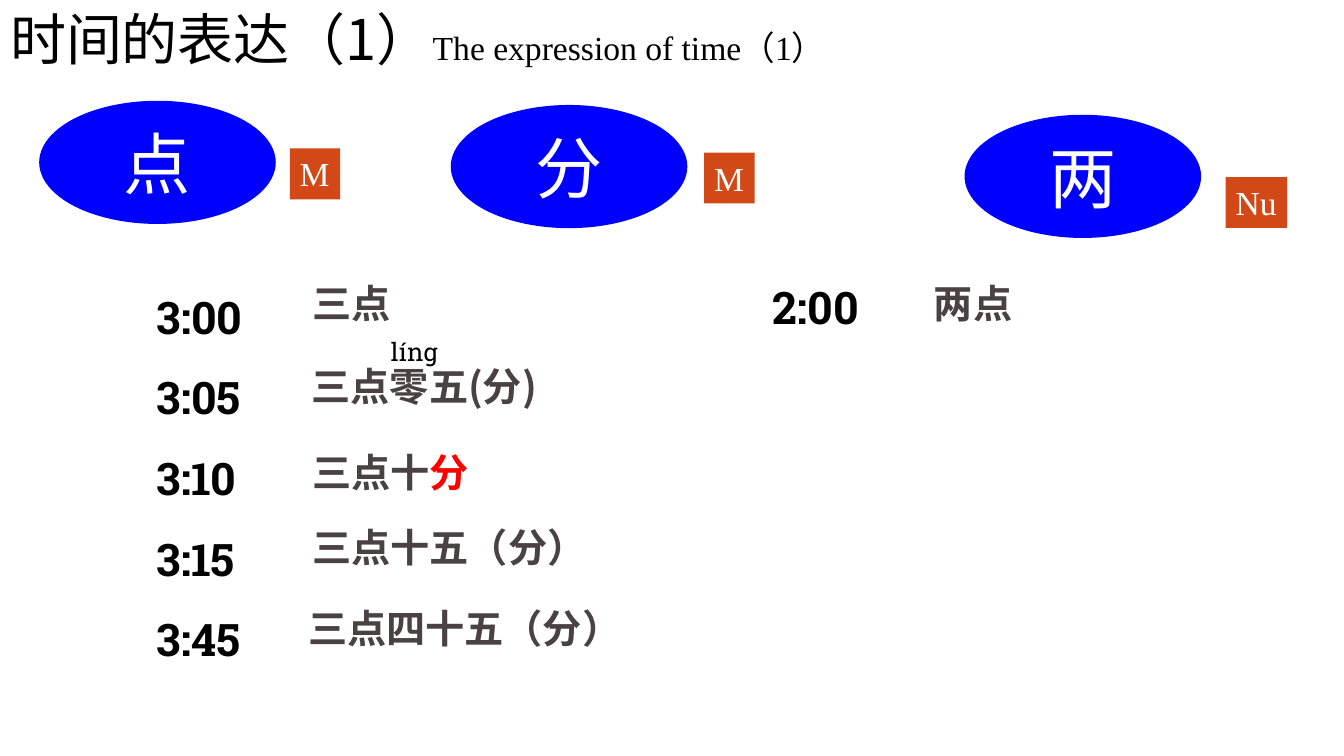
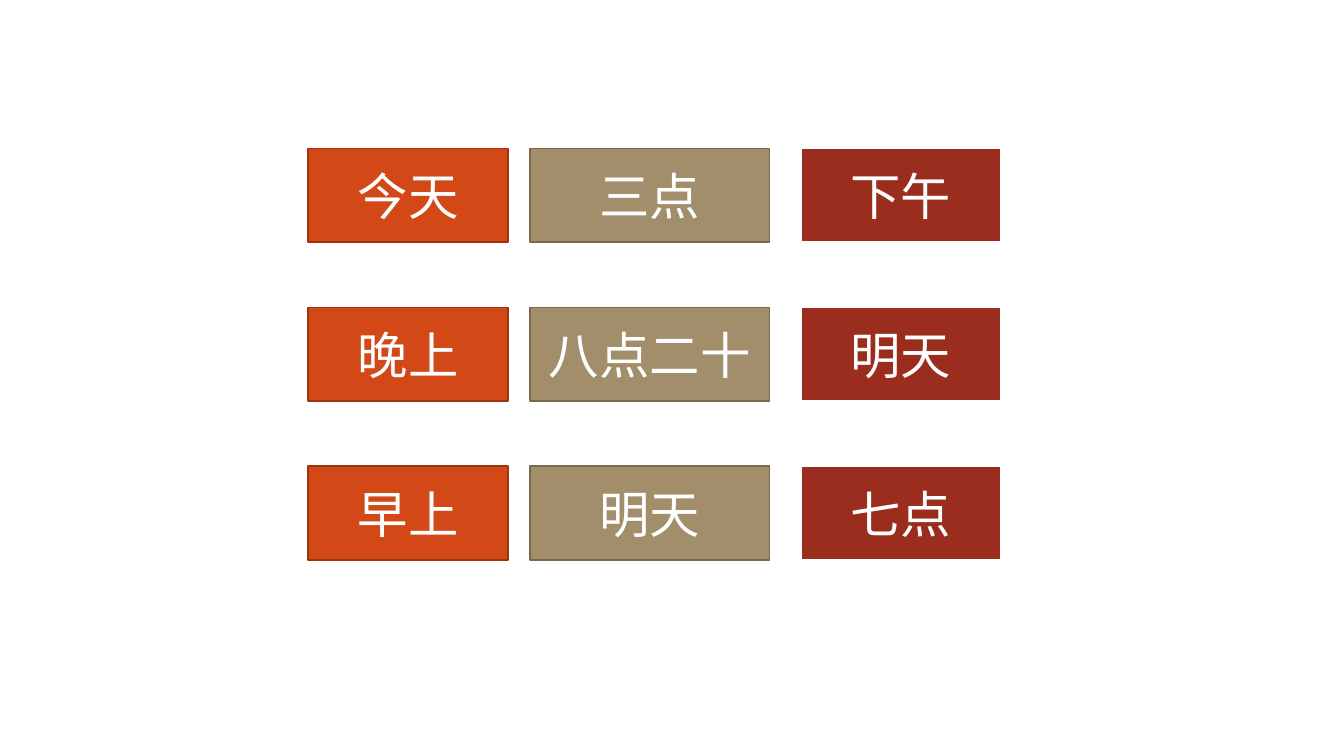
import pptx
import pptx.util
import pptx.dml.color
import pptx.enum.shapes
import pptx.enum.text
import pptx.oxml
import pptx.oxml.ns

Pt = pptx.util.Pt
RGB = pptx.dml.color.RGBColor
SHAPE = pptx.enum.shapes.MSO_SHAPE
ALIGN = pptx.enum.text.PP_ALIGN
ANCHOR = pptx.enum.text.MSO_ANCHOR

# Shared colours and fonts
BLACK = RGB(0x00, 0x00, 0x00)
WHITE = RGB(0xFF, 0xFF, 0xFF)
BLUE = RGB(0x00, 0x00, 0xFF)
RED = RGB(0xFF, 0x00, 0x00)
GREY = RGB(0x49, 0x41, 0x42)
ORANGE = RGB(0xD3, 0x48, 0x17)
DARK_ORANGE = RGB(0x9C, 0x35, 0x11)
TAN = RGB(0xA2, 0x8E, 0x6A)
DARK_TAN = RGB(0x78, 0x69, 0x4E)
BRICK = RGB(0x9B, 0x2D, 0x1F)
HAN = "Noto Sans CJK SC"
SLAB = "Roboto Slab"
SERIF = "Times New Roman"


def add_text(paragraph, text, size=28, font=HAN, color=BLACK, bold=False):
    """Add one run; Chinese characters always use the Han font."""
    run = paragraph.add_run()
    run.text = text
    run.font.size = Pt(size)
    run.font.name = font
    run.font.bold = bold
    run.font.color.rgb = color
    east_asian = pptx.oxml.parse_xml(
        f'<a:ea {pptx.oxml.ns.nsdecls("a")} typeface="{HAN}"/>')
    run.font._element.find(pptx.oxml.ns.qn("a:latin")).addnext(east_asian)


def add_box(slide, box):
    """Add a wrapping text box and return its first paragraph."""
    frame = slide.shapes.add_textbox(*map(Pt, box)).text_frame
    frame.word_wrap = True
    return frame.paragraphs[0]


def add_card(slide, kind, box, text, fill, line=None, line_width=1,
             align=ALIGN.CENTER, anchor=ANCHOR.MIDDLE, wrap=True, **style):
    card = slide.shapes.add_shape(kind, *map(Pt, box))
    card.shadow.inherit = False
    card.fill.solid()
    card.fill.fore_color.rgb = fill
    if line is None:
        card.line.fill.background()
    else:
        card.line.color.rgb = line
        card.line.width = Pt(line_width)
    frame = card.text_frame
    frame.word_wrap = wrap
    frame.vertical_anchor = anchor
    frame.paragraphs[0].alignment = align
    add_text(frame.paragraphs[0], text, color=WHITE, **style)


def place_title(slide, box):
    title = slide.shapes.title
    title.left, title.top, title.width, title.height = map(Pt, box)
    frame = title.text_frame
    frame.word_wrap = True
    frame.auto_size = pptx.enum.text.MSO_AUTO_SIZE.NONE
    frame.vertical_anchor = ANCHOR.TOP
    heading = frame.paragraphs[0]
    heading.alignment = ALIGN.LEFT
    add_text(heading, "时间的表达（1）", size=40)
    add_text(heading, "The expression of time（1）", size=24, font=SERIF)


def place_word(slide, left, top, word, word_class, class_offset, class_width):
    """A word in an oval with its word class beside it."""
    add_card(slide, SHAPE.OVAL, (left, top, 169, 88), word, BLUE, size=48)
    dx, dy = class_offset
    add_card(slide, SHAPE.RECTANGLE, (left + dx, top + dy, class_width, 36.4),
             word_class, ORANGE, align=ALIGN.LEFT, anchor=ANCHOR.TOP,
             wrap=False, size=24, font=SERIF)


def place_clock_times(slide, left, top, times, width=112, height=46, spacing=None):
    line = add_box(slide, (left, top, width, height))
    frame = line._parent
    for index, time in enumerate(times):
        if index:
            line = frame.add_paragraph()
        if spacing:
            line.line_spacing = spacing
        add_text(line, time, size=32, font=SLAB, bold=True)


def place_readings(slide, left, top, readings):
    """Spoken times: (dx, dy, text, red ending)."""
    for dx, dy, text, ending in readings:
        line = add_box(slide, (left + dx, top + dy, 289, 41))
        add_text(line, text, color=GREY, bold=True)
        if ending:
            add_text(line, ending, color=RED, bold=True)


def build_expression_slide(deck):
    slide = deck.slides.add_slide(deck.slide_layouts.get_by_name("Title Only"))
    place_title(slide, (0, -0.5, 633.5, 55))

    # New words
    place_word(slide, 28, 72, "点", "M", (179, 34), 36)
    place_word(slide, 322, 75, "分", "M", (181, 34), 36)
    place_word(slide, 689, 82, "两", "Nu", (186.5, 44.5), 44)

    # Three o'clock and its readings
    place_clock_times(slide, 105, 184, ["3:00", "3:05", "3:10", "3:15", "3:45"],
                      height=291, spacing=1.5)
    place_readings(slide, 216, 196, [
        (0, 0, "三点", ""),
        (-0.5, 59, "三点零五(分)", ""),
        (0, 121, "三点十", "分"),
        (0, 174, "三点十五（分）", ""),
        (-3, 232, "三点四十五（分）", ""),
    ])
    add_text(add_box(slide, (272, 237, 60, 29)), "líng", size=18, font=SLAB)

    # Two o'clock
    place_clock_times(slide, 545, 196.5, ["2:00"])
    place_readings(slide, 660, 196, [(0, 0, "两点", "")])


def place_card_grid(slide, left, top, rows):
    row_pitch, height = 113.5, 67
    columns = [  # offset, width, fill, line, line width
        (0, 143, ORANGE, DARK_ORANGE, 1),
        (158.5, 171, TAN, DARK_TAN, 1),
        (352, 143, BRICK, WHITE, 1.5),
    ]
    for row, words in enumerate(rows):
        for word, (dx, width, fill, line, line_width) in zip(words, columns):
            add_card(slide, SHAPE.RECTANGLE,
                     (left + dx, top + row * row_pitch, width, height),
                     word, fill, line, line_width, size=36)


def build_word_order_slide(deck):
    slide = deck.slides.add_slide(deck.slide_layouts.get_by_name("Blank"))
    place_card_grid(slide, 220, 106, [
        ("今天", "三点", "下午"),
        ("晚上", "八点二十", "明天"),
        ("早上", "明天", "七点"),
    ])


def main():
    deck = pptx.Presentation()
    deck.slide_width, deck.slide_height = Pt(960), Pt(540)
    build_expression_slide(deck)
    build_word_order_slide(deck)
    deck.save("out.pptx")


if __name__ == "__main__":
    main()
